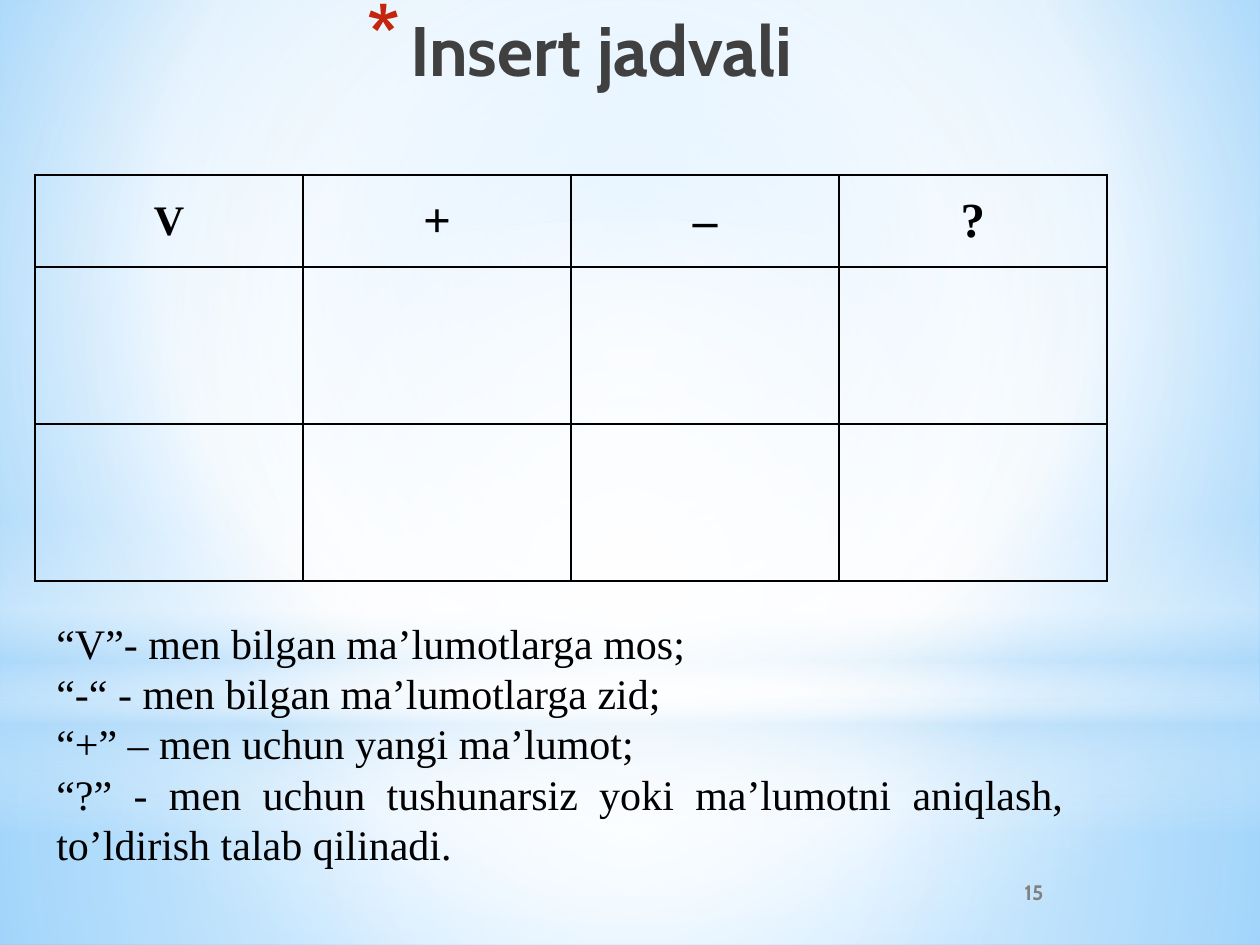
from lxml.etree import SubElement
from pptx import Presentation
from pptx.dml.color import RGBColor
from pptx.enum.shapes import MSO_SHAPE
from pptx.enum.text import MSO_ANCHOR, PP_ALIGN
from pptx.oxml import parse_xml
from pptx.oxml.ns import nsdecls, qn
from pptx.util import Emu, Pt

SERIF = "Times New Roman"
MID = (50, 50, 50, 50)


def px(num):
    """Turn pixels into EMU."""
    return Emu(round(num * 914400 / 126))


def rgb(code):
    """Turn a hex string into a colour."""
    return RGBColor.from_string(code)


def shade(fill, root, stops, rect=None):
    """Give root a gradient: round when rect is set, else downward."""
    marks = "".join(
        f'<a:gs pos="{pos * 1000}"><a:srgbClr val="{code}">'
        f'<a:alpha val="{alpha * 1000}"/></a:srgbClr></a:gs>'
        for pos, code, alpha in stops)
    if rect:
        sides = " ".join(f'{side}="{num * 1000}"' for side, num in zip("ltrb", rect))
        way = f'<a:path path="circle"><a:fillToRect {sides}/></a:path>'
    else:
        way = '<a:lin ang="5400000" scaled="0"/>'
    fill.solid()
    old = root.find(".//" + qn("a:solidFill"))
    old.getparent().replace(old, parse_xml(
        f'<a:gradFill {nsdecls("a")} rotWithShape="1"><a:gsLst>{marks}</a:gsLst>{way}</a:gradFill>'))


def write(para, text, align, color, **form):
    """Put one styled run into a paragraph and return its properties."""
    para.alignment = align
    run = para.add_run()
    run.text = text
    run.font.color.rgb = rgb(color)
    for key, val in form.items():
        setattr(run.font, key, val)
    return para._p.get_or_add_pPr()


def hang(props, size):
    """Set a hanging indent."""
    props.set("marL", str(px(size)))
    props.set("indent", str(-px(size)))


def frame(slide, box, anchor=MSO_ANCHOR.TOP):
    """Add a wrapping text box."""
    text = slide.shapes.add_textbox(*map(px, box)).text_frame
    text.word_wrap = True
    text.vertical_anchor = anchor
    return text


def glow(slide, box):
    """Lay the soft light over the background."""
    left, top, wide, high = box
    split, band = 703, 315
    rect, oval = MSO_SHAPE.RECTANGLE, MSO_SHAPE.OVAL
    shade(slide.background.fill, slide.element,
          [(0, "9ED5FF", 100), (60, "FFFFFF", 100), (100, "5BB9FF", 100)], (20, 10, 20, 60))
    parts = [
        (rect, split, high - split,
         [(0, "FFFFFF", 91), (37, "FFFFFF", 76), (100, "B4DCFA", 79)], MID),
        (rect, 0, split,
         [(0, "FFFFFF", 89), (48, "FFFFFF", 62), (100, "B4DCFA", 79)], MID),
        (rect, 519, band,
         [(0, "FFFFFF", 0), (29, "FFFFFF", 30), (45, "B4DCFA", 40),
          (55, "FFFFFF", 26), (65, "B4DCFA", 60), (100, "FFFFFF", 0)], None),
        (oval, 220, split, [(0, "FFFFFF", 100), (56, "FFFFFF", 0)], MID),
    ]
    for kind, down, tall, stops, mid in parts:
        shape = slide.shapes.add_shape(kind, px(left), px(top + down), px(wide), px(tall))
        shape.shadow.inherit = False
        shape.line.fill.background()
        shade(shape.fill, shape._element.spPr, stops, mid)


def title(slide, box):
    """Write the heading with its star bullet."""
    para = frame(slide, box).paragraphs[0]
    props = write(para, "Insert jadvali", PP_ALIGN.CENTER, "404040",
                  name="Cabin", size=Pt(40), bold=True)
    hang(props, 44)
    SubElement(SubElement(props, qn("a:buClr")), qn("a:srgbClr")).set("val", "C3260C")
    SubElement(props, qn("a:buSzPct")).set("val", "128000")
    SubElement(props, qn("a:buChar")).set("char", "*")


def edge(cell):
    """Draw a thin black border and clear the fill."""
    props = cell._tc.get_or_add_tcPr()
    for side in "LRTB":
        props.append(parse_xml(
            f'<a:ln{side} {nsdecls("a")} w="{Pt(1)}"><a:solidFill>'
            f'<a:srgbClr val="000000"/></a:solidFill></a:ln{side}>'))
    cell.fill.background()


def table(slide, box):
    """Build the four-column grid of signs."""
    heads = [("V", 24), ("+", 28), ("–", 28), ("?", 28)]
    rows = [92, 157, 157]
    grid = slide.shapes.add_table(len(rows), len(heads), *map(px, box)).table
    for key in ("first_row", "horz_banding"):
        setattr(grid, key, False)
    for row, high in zip(grid.rows, rows):
        row.height = px(high)
    for col in grid.columns:
        col.width = px(box[2] // len(heads))
    for cell in grid.iter_cells():
        edge(cell)
    for cell, (sign, size) in zip(grid.rows[0].cells, heads):
        cell.vertical_anchor = MSO_ANCHOR.MIDDLE
        hang(write(cell.text_frame.paragraphs[0], sign, PP_ALIGN.CENTER, "000000",
                   name=SERIF, size=Pt(size), bold=True), 47)


def legend(slide, box):
    """Explain the signs."""
    lines = [
        "“V”- men bilgan ma’lumotlarga mos;",
        "“-“ - men bilgan ma’lumotlarga zid;",
        "“+” – men uchun yangi ma’lumot;",
        "“?” - men uchun tushunarsiz yoki ma’lumotni aniqlash, to’ldirish talab qilinadi.",
    ]
    text = frame(slide, box)
    for num, line in enumerate(lines):
        para = text.add_paragraph() if num else text.paragraphs[0]
        write(para, line, PP_ALIGN.JUSTIFY, "000000", name=SERIF, size=Pt(24))


def number(slide, box):
    """Write the page number."""
    para = frame(slide, box, MSO_ANCHOR.MIDDLE).paragraphs[0]
    write(para, "15", PP_ALIGN.CENTER, "808080", name="Cabin", size=Pt(12), bold=True)


def main():
    """Build and save the deck."""
    deck = Presentation()
    deck.slide_width, deck.slide_height = px(1260), px(945)
    slide = deck.slides.add_slide(deck.slide_layouts[6])
    glow(slide, (0, 0, 1260, 945))
    number(slide, (903, 861, 262, 63))
    title(slide, (44, 0, 1071, 158))
    table(slide, (35, 175, 1072, 406))
    legend(slide, (44, 611, 1032, 267))
    deck.save("out.pptx")


if __name__ == "__main__":
    main()
